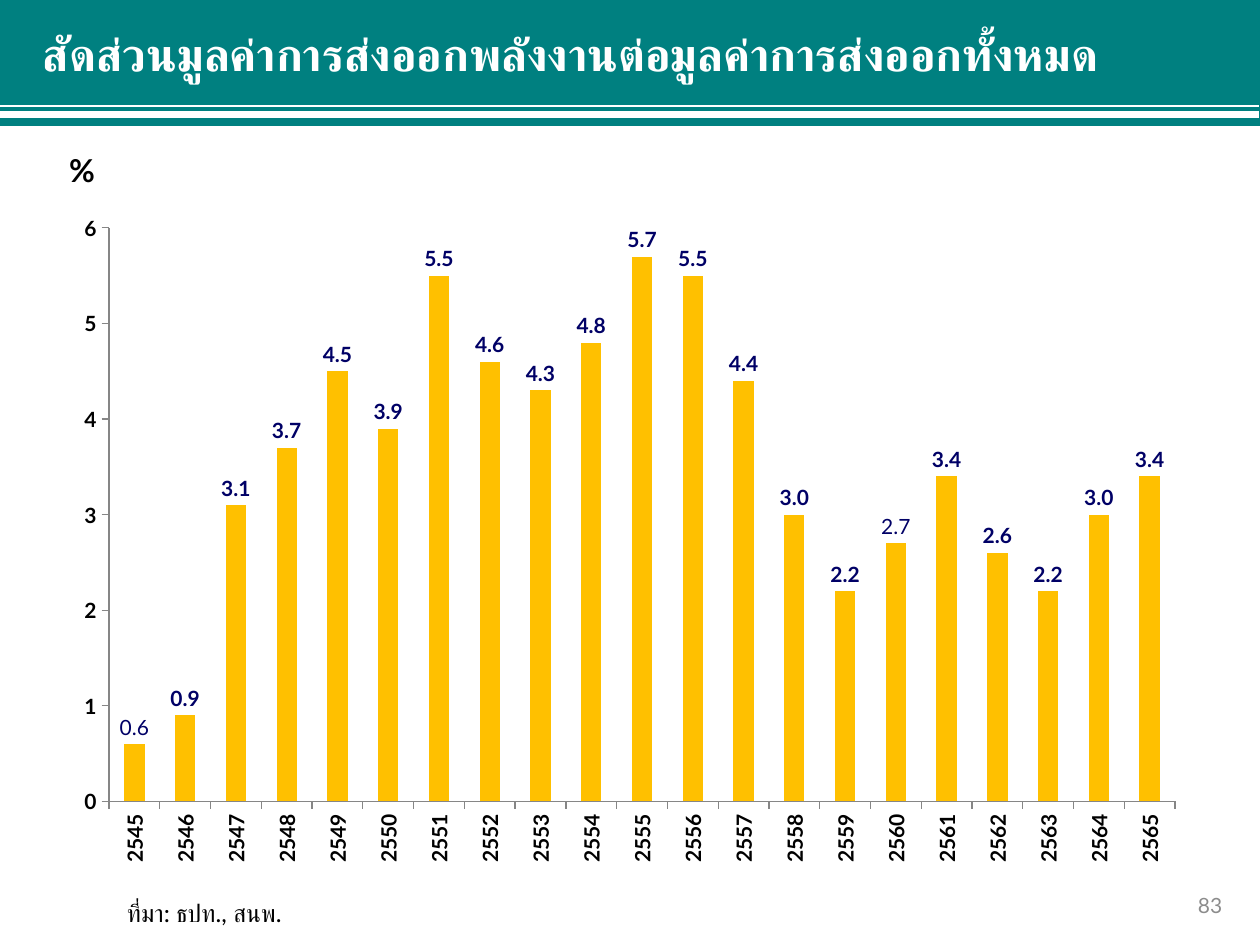
import pptx
import pptx.chart.data
import pptx.dml.color
import pptx.enum.chart
import pptx.enum.shapes
import pptx.enum.text
import pptx.oxml
import pptx.oxml.ns
import pptx.util
from lxml import etree

COLS, ROWS = 100, 75
CELL = pptx.util.Inches(0.1)
FONT = "Lato"
TEAL, WHITE, BLACK = "008080", "FFFFFF", "000000"
GOLD, NAVY, GREY, AXIS = "FFC000", "000066", "8C8C8C", "868686"

ALIGN = pptx.enum.text.PP_ALIGN
ANCHOR = pptx.enum.text.MSO_ANCHOR
CHART = pptx.enum.chart

FIRST = 2545
SHARES = [0.6, 0.9, 3.1, 3.7, 4.5, 3.9, 5.5, 4.6, 4.3, 4.8, 5.7,
          5.5, 4.4, 3.0, 2.2, 2.7, 3.4, 2.6, 2.2, 3.0, 3.4]
LIGHT = (2545, 2560)  # years whose label is not bold


def color(code):
    return pptx.dml.color.RGBColor.from_string(code)


def grid(*cells):
    """Turn grid columns and rows into slide lengths."""
    return [round(cell * CELL) for cell in cells]


def put(item, **form):
    for name, value in form.items():
        setattr(item, name, value)


def style(font, size, code, bold=False):
    put(font, name=FONT, size=pptx.util.Pt(size), bold=bold)
    font.color.rgb = color(code)


def write(shape, text, size, code, bold=False, align=ALIGN.LEFT,
          anchor=ANCHOR.TOP, wrap=True):
    frame = shape.text_frame
    put(frame, text=text, word_wrap=wrap, vertical_anchor=anchor,
        auto_size=pptx.enum.text.MSO_AUTO_SIZE.NONE)
    para = frame.paragraphs[0]
    para.alignment = align
    style(para.runs[0].font, size, code, bold)


def label(slide, box, text, size, code, **form):
    write(slide.shapes.add_textbox(*grid(*box)), text, size, code, **form)


def rule(slide, left, top, width, weight):
    line = slide.shapes.add_connector(
        pptx.enum.shapes.MSO_CONNECTOR.STRAIGHT,
        *grid(left, top, left + width, top))
    line.line.color.rgb = color(WHITE)
    line.line.width = pptx.util.Pt(weight)
    etree.SubElement(line.element.spPr, pptx.oxml.ns.qn("a:effectLst"))


def header(slide, box, text):
    """Teal band with two white rules and the slide title."""
    left, top, width, height = box
    band = slide.shapes.add_shape(
        pptx.enum.shapes.MSO_SHAPE.RECTANGLE, *grid(*box))
    band.shadow.inherit = False
    band.fill.solid()
    band.fill.fore_color.rgb = color(TEAL)
    band.line.fill.background()
    for drop, weight in ((9.5, 3.75), (8.8, 1.25)):
        rule(slide, left, top + drop, width - 0.1, weight)

    title = slide.shapes.title
    spot = grid(left + 2.7, top + 2, width - 1.1, 5.4)
    put(title, **dict(zip(("left", "top", "width", "height"), spot)))
    write(title, text, 26, WHITE, bold=True)
    title.element.getparent().append(title.element)


def place(chart, **part):
    """Fix the inner plot area as shares of the chart."""
    area = chart.element.find(".//" + pptx.oxml.ns.qn("c:plotArea"))
    for old in area.findall(pptx.oxml.ns.qn("c:layout")):
        area.remove(old)
    sides = "".join(f'<c:{key} val="{val}"/>' for key, val in part.items())
    area.insert(0, pptx.oxml.parse_xml(
        f'<c:layout {pptx.oxml.ns.nsdecls("c")}><c:manualLayout>'
        '<c:layoutTarget val="inner"/><c:xMode val="edge"/>'
        f'<c:yMode val="edge"/>{sides}</c:manualLayout></c:layout>'))


def axes(chart):
    for axis in (chart.category_axis, chart.value_axis):
        put(axis, has_major_gridlines=False,
            major_tick_mark=CHART.XL_TICK_MARK.OUTSIDE,
            minor_tick_mark=CHART.XL_TICK_MARK.NONE)
        style(axis.tick_labels.font, 12, BLACK, bold=True)
        axis.format.line.color.rgb = color(AXIS)
    put(chart.value_axis, minimum_scale=0, maximum_scale=6, major_unit=1)
    put(chart.value_axis.tick_labels, number_format="#,##0",
        number_format_is_linked=False)
    body = chart.category_axis._element.find(
        ".//" + pptx.oxml.ns.qn("a:bodyPr"))
    body.set("rot", "-5400000")
    body.set("vert", "horz")


def bars(slide, box):
    """Column chart of the yearly shares."""
    data = pptx.chart.data.CategoryChartData(number_format="#,##0.0")
    data.categories = [str(FIRST + step) for step in range(len(SHARES))]
    data.add_series("Series 1", SHARES)
    chart = slide.shapes.add_chart(
        CHART.XL_CHART_TYPE.COLUMN_CLUSTERED, *grid(*box), data).chart
    put(chart, has_legend=False, has_title=False)
    style(chart.font, 18, BLACK)
    axes(chart)
    place(chart, x=0.0416, y=0.039, w=0.938, h=0.851)

    plot = chart.plots[0]
    put(plot, gap_width=150, vary_by_categories=False)
    series = plot.series[0]
    series.format.fill.solid()
    series.format.fill.fore_color.rgb = color(GOLD)
    outer = CHART.XL_LABEL_POSITION.OUTSIDE_END
    tags = series.data_labels
    put(tags, show_value=True, position=outer, number_format="#,##0.0",
        number_format_is_linked=False)
    style(tags.font, 12, NAVY, bold=True)
    for year in LIGHT:
        tag = series.points[year - FIRST].data_label
        style(tag.font, 12, NAVY)
        tag.position = outer


def main():
    deck = pptx.Presentation()
    put(deck, slide_width=COLS * CELL, slide_height=ROWS * CELL)
    slide = deck.slides.add_slide(deck.slide_layouts[5])
    bars(slide, (4.9, 16, 90.2, 53.5))
    header(slide, (-0.3, -0.4, COLS + 0.3, 10.4),
           "สัดส่วนมูลค่าการส่งออกพลังงานต่อมูลค่าการส่งออกทั้งหมด")
    label(slide, (1.6, 11.5, 9.8, 4), "%", 18, BLACK, bold=True,
          align=ALIGN.CENTER)
    label(slide, (9.1, 70.8, 16.7, 3.4), "ที่มา: ธปท., สนพ.", 14, BLACK,
          wrap=False)
    label(slide, (92.7, 70, 5.3, 3.7), "83", 12, GREY, align=ALIGN.RIGHT,
          anchor=ANCHOR.MIDDLE)
    deck.save("out.pptx")


if __name__ == "__main__":
    main()
